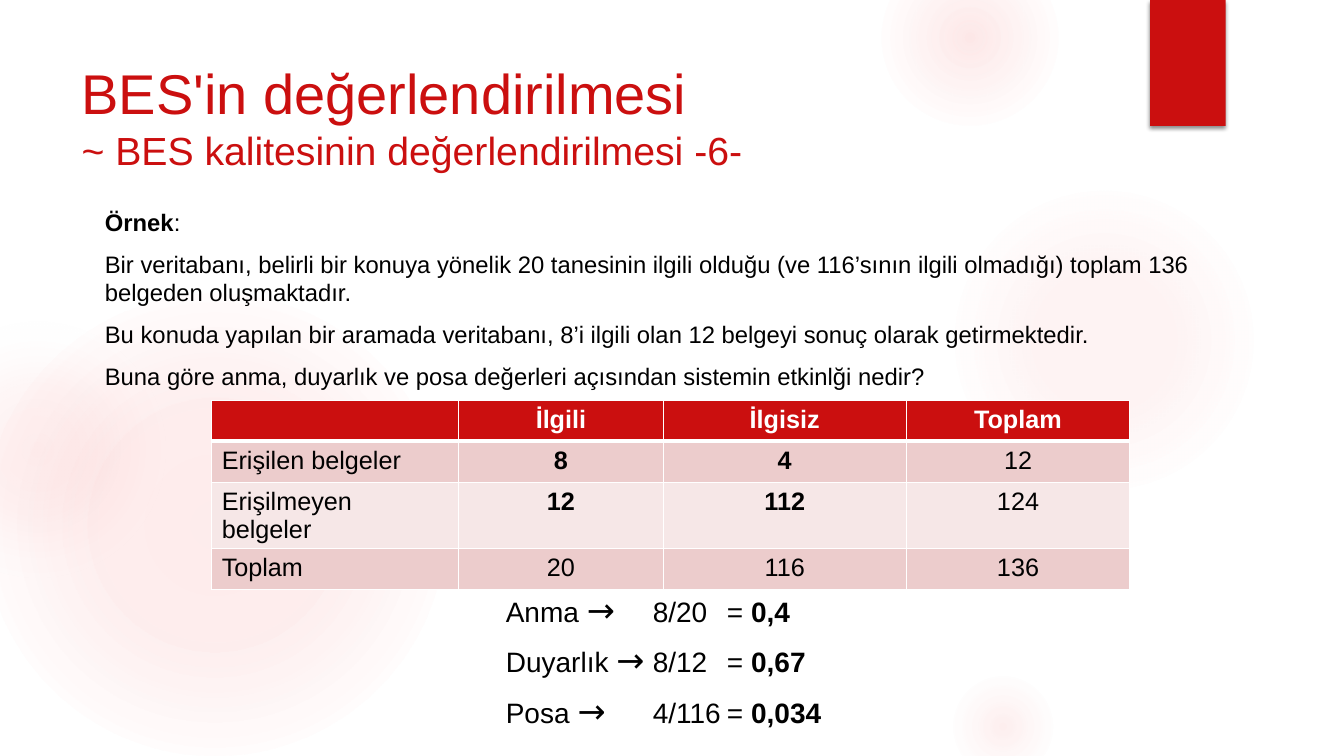
from pptx import Presentation
from pptx import oxml, util as u
from pptx.dml import color
from pptx.enum import shapes, text
from pptx.oxml import ns

Pt = u.Pt
A = ns.nsdecls("a")
RED, GLOW, BLACK, WHITE = "CB0F0F", "F35C5C", "000000", "FFFFFF"
ROW_DARK, ROW_LIGHT = "ECCCCC", "F6E7E7"


def rgb(value):
    return color.RGBColor.from_string(value)


def box(left, top, width, height):
    return Pt(left), Pt(top), Pt(width), Pt(height)


class SlideBuilder:
    font = "Arial"
    arrow_font = "League Spartan"

    def __init__(self, slide):
        self.slide = slide

    def run(self, paragraph, words, size, ink=BLACK, bold=False, font=None):
        run = paragraph.add_run()
        run.text = words
        run.font.name = font or self.font
        run.font.size = Pt(size)
        run.font.bold = bold
        run.font.color.rgb = rgb(ink)

    def paragraphs(self, frame, count):
        """Return the frame's first paragraph followed by new ones."""
        return [frame.paragraphs[0]] + [frame.add_paragraph() for _ in range(count - 1)]

    def shape(self, kind, place):
        shape = self.slide.shapes.add_shape(kind, *box(*place))
        shape.shadow.inherit = False
        shape.line.fill.background()
        return shape

    def glow(self, left, top, size, stops):
        circle = self.shape(shapes.MSO_SHAPE.OVAL, (left, top, size, size))
        circle.fill.background()
        marks = "".join(
            f'<a:gs pos="{pos * 1000}"><a:srgbClr val="{tint}">'
            f'<a:alpha val="{alpha * 1000}"/></a:srgbClr></a:gs>'
            for pos, tint, alpha in stops)
        gradient = oxml.parse_xml(
            f'<a:gradFill {A} rotWithShape="1"><a:gsLst>{marks}</a:gsLst><a:path path="circle">'
            '<a:fillToRect l="50000" t="50000" r="50000" b="50000"/></a:path></a:gradFill>')
        properties = circle.element.spPr
        properties.replace(properties.find(ns.qn("a:noFill")), gradient)

    def ribbon(self, place):
        ribbon = self.shape(shapes.MSO_SHAPE.RECTANGLE, place)
        ribbon.fill.solid()
        ribbon.fill.fore_color.rgb = rgb(RED)
        ribbon.element.spPr.find(ns.qn("a:effectLst")).append(oxml.parse_xml(
            f'<a:outerShdw {A} blurRad="{Pt(3)}" dist="{Pt(2)}" dir="5400000" rotWithShape="0">'
            f'<a:srgbClr val="{BLACK}"><a:alpha val="45000"/></a:srgbClr></a:outerShdw>'))

    def placeholder(self, index, place):
        """Move a placeholder into position, in front of what is drawn so far."""
        holder = self.slide.placeholders[index]
        holder.left, holder.top, holder.width, holder.height = box(*place)
        holder.element.getparent().append(holder.element)
        frame = holder.text_frame
        frame.word_wrap = True
        frame.auto_size = text.MSO_AUTO_SIZE.NONE
        frame.vertical_anchor = text.MSO_ANCHOR.TOP
        return frame

    def title(self, place, heading, subheading):
        frame = self.placeholder(0, place)
        frame.margin_top = Pt(6)
        paragraph = frame.paragraphs[0]
        paragraph.alignment = text.PP_ALIGN.LEFT
        self.run(paragraph, heading, 40, RED)
        paragraph.add_line_break()
        self.run(paragraph, subheading, 28, RED)

    def body(self, place, items):
        frame = self.placeholder(1, place)
        for paragraph, runs in zip(self.paragraphs(frame, len(items)), items):
            paragraph.space_before, paragraph.space_after = Pt(3.4), Pt(6)
            properties = paragraph._p.get_or_add_pPr()
            properties.set("marL", "0")
            properties.set("indent", "0")
            properties.append(oxml.parse_xml(f"<a:buNone {A}/>"))
            for words, bold in runs:
                self.run(paragraph, words, 17, bold=bold)

    def border(self, cell, sides):
        properties = cell._tc.get_or_add_tcPr()
        for position, (side, width) in enumerate(sides.items()):
            properties.insert(position, oxml.parse_xml(
                f'<a:ln{side} {A} w="{Pt(width)}"><a:solidFill>'
                f'<a:srgbClr val="{WHITE}"/></a:solidFill></a:ln{side}>'))

    def table(self, left, top, widths, row_height, rows):
        table = self.slide.shapes.add_table(
            len(rows), len(widths),
            *box(left, top, sum(widths), row_height * len(rows))).table
        for column, width in zip(table.columns, widths):
            column.width = Pt(width)
        for r, values in enumerate(rows):
            table.rows[r].height = Pt(row_height)
            header = r == 0
            for c, value in enumerate(values):
                cell = table.cell(r, c)
                cell.fill.solid()
                cell.fill.fore_color.rgb = rgb(
                    RED if header else ROW_DARK if r % 2 else ROW_LIGHT)
                self.border(cell, {"L": 1, "R": 1, "T": 3 if r == 1 else 1,
                                   "B": 3 if header else 1})
                if not value:
                    continue
                paragraph = cell.text_frame.paragraphs[0]
                if header or c:
                    paragraph.alignment = text.PP_ALIGN.CENTER
                counted = r in (1, 2) and c in (1, 2)
                self.run(paragraph, value, 18, WHITE if header else BLACK, header or counted)

    def results(self, place, measures, tabs):
        frame = self.slide.shapes.add_textbox(*box(*place)).text_frame
        frame.word_wrap = True
        stops = "".join(f'<a:tab pos="{Pt(tab)}" algn="l"/>' for tab in tabs)
        for paragraph, (name, ratio, value) in zip(
                self.paragraphs(frame, len(measures)), measures):
            paragraph.line_spacing = 0.9
            paragraph.space_before = Pt(10)
            paragraph._p.get_or_add_pPr().append(
                oxml.parse_xml(f"<a:tabLst {A}>{stops}</a:tabLst>"))
            self.run(paragraph, f"{name} ", 20)
            self.run(paragraph, "→", 24, font=self.arrow_font)
            self.run(paragraph, f"\t{ratio}\t= ", 20)
            self.run(paragraph, value, 20, bold=True)


def main():
    deck = Presentation()
    deck.slide_width, deck.slide_height = Pt(960), Pt(540)
    page = SlideBuilder(deck.slides.add_slide(deck.slide_layouts[1]))

    # Background glows and ribbon
    page.glow(-12, 210, 330, [(0, GLOW, 11), (36, GLOW, 10), (75, GLOW, 0)])
    page.glow(-66, 228, 186, [(0, GLOW, 8), (36, GLOW, 5), (71, "F3F3F3", 0)])
    page.glow(677.5, 132, 222, [(0, GLOW, 7), (36, GLOW, 6), (69, GLOW, 0)])
    page.glow(630, -36, 126, [(0, GLOW, 14), (36, GLOW, 7), (73, GLOW, 0)])
    page.glow(677.5, 480, 78, [(0, GLOW, 10), (31, GLOW, 5), (66, GLOW, 0)])
    page.ribbon((821.5, 0, 54, 90))

    # Example description
    page.body((67.7, 144.7, 828, 129), [
        [("Örnek", True), (":", False)],
        [("Bir veritabanı, belirli bir konuya yönelik 20 tanesinin ilgili olduğu "
          "(ve 116’sının ilgili olmadığı) toplam 136 belgeden oluşmaktadır.", False)],
        [("Bu konuda yapılan bir aramada veritabanı, 8’i ilgili olan 12 belgeyi "
          "sonuç olarak getirmektedir.", False)],
        [("Buna göre anma, duyarlık ve posa değerleri açısından sistemin "
          "etkinlği nedir?", False)],
    ])

    # Retrieval table
    page.table(151.2, 286, [176.4, 146.2, 173.5, 159.8], 29.2, [
        ["", "İlgili", "İlgisiz", "Toplam"],
        ["Erişilen belgeler", "8", "4", "12"],
        ["Erişilmeyen belgeler", "12", "112", "124"],
        ["Toplam", "20", "116", "136"],
    ])

    # Computed measures
    page.results((354.2, 420.5, 265, 119), [
        ("Anma", "8/20", "0,4"),
        ("Duyarlık", "8/12", "0,67"),
        ("Posa", "4/116", "0,034"),
    ], tabs=(105, 158))

    # Title
    page.title((51.1, 36, 741, 110), "BES'in değerlendirilmesi",
               "~ BES kalitesinin değerlendirilmesi -6-")

    deck.save("out.pptx")


if __name__ == "__main__":
    main()
